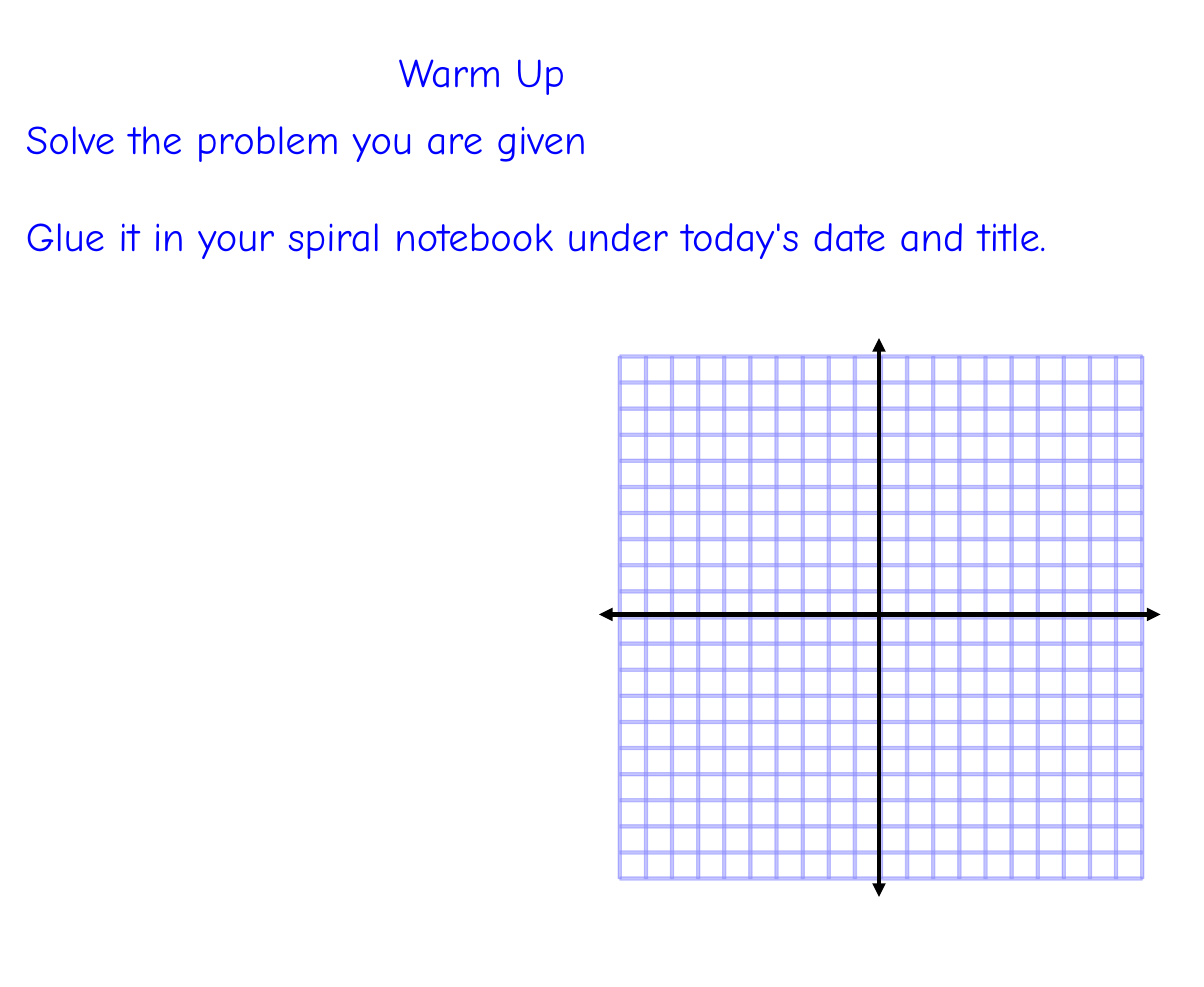
from dataclasses import dataclass

from lxml.etree import SubElement
from pptx import Presentation
from pptx.dml.color import RGBColor
from pptx.enum.shapes import MSO_CONNECTOR, MSO_SHAPE
from pptx.enum.text import MSO_AUTO_SIZE
from pptx.oxml.ns import qn
from pptx.util import Inches, Pt


@dataclass(frozen=True)
class Theme:
    font: str = "Comic Neue"
    text_size: float = 27
    paragraph_gap: float = 32.3
    text: RGBColor = RGBColor(0x00, 0x00, 0xFF)
    grid: RGBColor = RGBColor(0x8C, 0x8C, 0xFF)
    grid_opacity: int = 51
    axis: RGBColor = RGBColor(0x00, 0x00, 0x00)
    axis_width: float = 3


THEME = Theme()
WIDTH, HEIGHT = 11.11, 9.11

# Coordinate grid: square cells counted from the top left corner
CELLS = 20
GRID_LEFT, GRID_TOP, GRID_SPAN = 5.72, 3.29, 4.82
CELL = GRID_SPAN / CELLS
RULE = 0.03


def column(count):
    return GRID_LEFT + count * CELL


def row(count):
    return GRID_TOP + count * CELL


def set_all(target, values):
    for name, value in values.items():
        setattr(target, name, value)


def add_text(slide, left, top, width, height, lines):
    """Place paragraphs in a box given in inches."""
    box = slide.shapes.add_textbox(*map(Inches, (left, top, width, height)))
    frame = box.text_frame
    set_all(frame, {"word_wrap": True, "auto_size": MSO_AUTO_SIZE.SHAPE_TO_FIT_TEXT})
    for index, line in enumerate(lines):
        paragraph = frame.add_paragraph() if index else frame.paragraphs[0]
        paragraph.space_before = Pt(THEME.paragraph_gap if index else 0)
        run = paragraph.add_run()
        run.text = line
        set_all(run.font, {"name": THEME.font, "size": Pt(THEME.text_size)})
        run.font.color.rgb = THEME.text


def add_rule(graph, left, top, width, height):
    """Draw one translucent grid rule."""
    rule = graph.shapes.add_shape(
        MSO_SHAPE.RECTANGLE, *map(Inches, (left, top, width, height)))
    rule.shadow.inherit = False
    rule.fill.solid()
    rule.fill.fore_color.rgb = THEME.grid
    rule.line.color.rgb = THEME.grid
    rule.line.width = Pt(0)
    for color in rule.fill._xPr.iter(qn("a:srgbClr")):
        SubElement(color, qn("a:alpha"), val=str(THEME.grid_opacity * 1000))


def add_axis(graph, start, end):
    """Draw an axis with an arrowhead at both ends."""
    axis = graph.shapes.add_connector(
        MSO_CONNECTOR.STRAIGHT, *map(Inches, (*start, *end)))
    axis.line.color.rgb = THEME.axis
    axis.line.width = Pt(THEME.axis_width)
    stroke = axis.line._get_or_add_ln()
    for arrow in ("a:headEnd", "a:tailEnd"):
        SubElement(stroke, qn(arrow), type="triangle")
    SubElement(axis._element.spPr, qn("a:effectLst"))


def add_graph(slide):
    graph = slide.shapes.add_group_shape()

    # Grid rules, centred on the cell edges
    for count in range(CELLS + 1):
        add_rule(graph, column(count) - RULE / 2, row(0), RULE, GRID_SPAN)
        add_rule(graph, column(0), row(count) - RULE / 2, GRID_SPAN, RULE)

    # Axes, reaching past the grid on every side
    origin_x, origin_y = column(9.92), row(9.88)
    add_axis(graph, (origin_x, row(20.7)), (origin_x, row(-0.7)))
    add_axis(graph, (column(-0.8), origin_y), (column(20.7), origin_y))


def main():
    presentation = Presentation()
    set_all(presentation, {"slide_width": Inches(WIDTH), "slide_height": Inches(HEIGHT)})
    slide = presentation.slides.add_slide(presentation.slide_layouts[6])

    # Title and instructions
    add_text(slide, 3.58, 0.38, 2.83, 0.56, ["Warm Up"])
    add_text(slide, 0.14, 1, 10.61, 1.46, [
        "Solve the problem you are given",
        "Glue it in your spiral notebook under today's date and title.",
    ])

    # Blank coordinate plane
    add_graph(slide)
    presentation.save("out.pptx")


if __name__ == "__main__":
    main()
